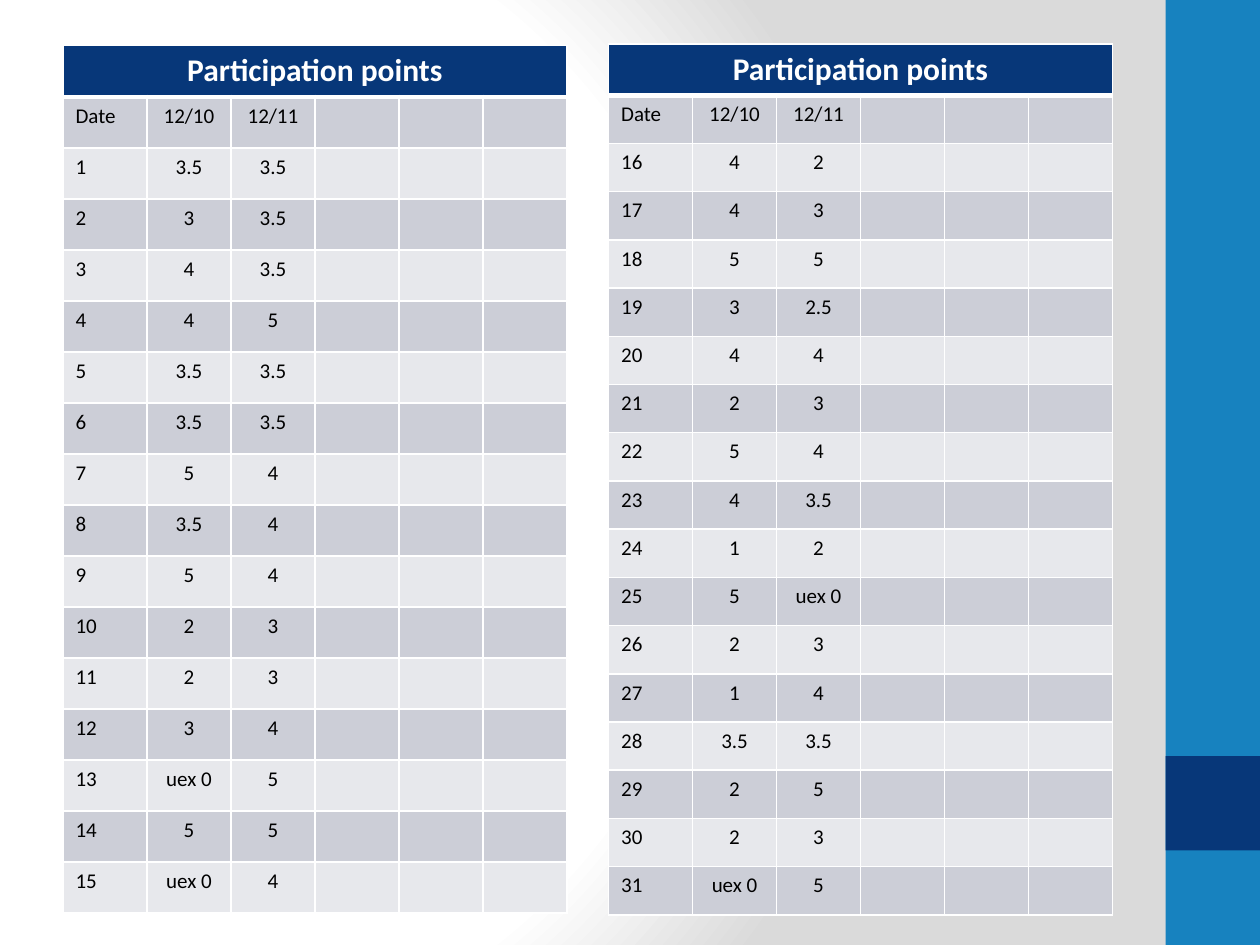
"""Build a slide with two tables of class participation points."""
from lxml.etree import SubElement
from pptx import Presentation
from pptx.dml.color import RGBColor
from pptx.enum.shapes import MSO_SHAPE
from pptx.enum.text import PP_ALIGN
from pptx.oxml import parse_xml
from pptx.oxml.ns import nsdecls, qn
from pptx.util import Inches, Pt

BLACK = RGBColor(0x00, 0x00, 0x00)
WHITE = RGBColor(0xFF, 0xFF, 0xFF)
NAVY = RGBColor(0x07, 0x37, 0x79)
BLUE = RGBColor(0x17, 0x82, 0xBF)
DARK = RGBColor(0xCC, 0xCE, 0xD7)
LIGHT = RGBColor(0xE7, 0xE8, 0xEC)
GRAY = RGBColor(0xDA, 0xDA, 0xDA)

COLS = 6
DATES = ["Date", "12/10", "12/11"]
LEFT = [
    ("3.5", "3.5"), ("3", "3.5"), ("4", "3.5"), ("4", "5"), ("3.5", "3.5"),
    ("3.5", "3.5"), ("5", "4"), ("3.5", "4"), ("5", "4"), ("2", "3"),
    ("2", "3"), ("3", "4"), ("uex 0", "5"), ("5", "5"), ("uex 0", "4"),
]
RIGHT = [
    ("4", "2"), ("4", "3"), ("5", "5"), ("3", "2.5"), ("4", "4"), ("2", "3"),
    ("5", "4"), ("4", "3.5"), ("1", "2"), ("5", "uex 0"), ("2", "3"),
    ("1", "4"), ("3.5", "3.5"), ("2", "5"), ("2", "3"), ("uex 0", "5"),
]


def write(cell, text, size=12, color=BLACK, bold=False, align=PP_ALIGN.LEFT):
    """Put formatted text in a cell; an empty cell keeps the text size."""
    para = cell.text_frame.paragraphs[0]
    para.alignment = align
    if not text:
        para._p.get_or_add_endParaRPr().set("sz", str(size * 100))
        return
    run = para.add_run()
    run.text = text
    run.font.name = "Calibri"
    run.font.size = Pt(size)
    run.font.bold = bold
    run.font.color.rgb = color


def paint(cell, color, top=1, bottom=1):
    """Give a cell white borders and a solid fill."""
    props = cell._tc.get_or_add_tcPr()
    for side, width in (("L", 1), ("R", 1), ("T", top), ("B", bottom)):
        line = SubElement(props, qn(f"a:ln{side}"), w=str(Pt(width)))
        fill = SubElement(line, qn("a:solidFill"))
        SubElement(fill, qn("a:srgbClr"), val=str(WHITE))
    cell.fill.solid()
    cell.fill.fore_color.rgb = color


deck = Presentation()
deck.slide_width, deck.slide_height = Inches(10), Inches(7.5)
slide = deck.slides.add_slide(deck.slide_layouts[6])

stops = "".join(
    f'<a:gs pos="{pos * 1000}"><a:srgbClr val="{color}"/></a:gs>'
    for pos, color in ((0, WHITE), (75, WHITE), (100, GRAY))
)
slide._element.cSld.insert(0, parse_xml(
    f'<p:bg {nsdecls("p", "a")}><p:bgPr><a:gradFill rotWithShape="1">'
    f'<a:gsLst>{stops}</a:gsLst><a:path path="circle">'
    '<a:fillToRect l="20000" t="50000" r="100000" b="50000"/></a:path>'
    '</a:gradFill><a:effectLst/></p:bgPr></p:bg>'
))

for top, height, color in ((0, 7.5, BLUE), (6, 0.75, NAVY)):
    band = slide.shapes.add_shape(
        MSO_SHAPE.RECTANGLE, Inches(9.25), Inches(top), Inches(0.75), Inches(height)
    )
    band.shadow.inherit = False
    band.fill.solid()
    band.fill.fore_color.rgb = color
    band.line.fill.background()

for left, top, height, head, first, points in (
    (0.5, 0.36, 6.89, 0.41, 1, LEFT),
    (4.83, 0.35, 6.91, 0.4, 16, RIGHT),
):
    rows = [DATES] + [[str(num), *pair] for num, pair in enumerate(points, first)]
    table = slide.shapes.add_table(
        len(rows) + 1, COLS, Inches(left), Inches(top), Inches(4), Inches(height)
    ).table
    table.first_row = table.horz_banding = False
    for row in table.rows:
        row.height = Inches((height - head) / len(rows))
    table.rows[0].height = Inches(head)

    for col in range(COLS):
        paint(table.cell(0, col), NAVY, bottom=3)
    title = table.cell(0, 0)
    title.merge(table.cell(0, COLS - 1))
    write(title, "Participation points", size=18, color=WHITE, bold=True,
          align=PP_ALIGN.CENTER)

    for row, values in enumerate(rows, 1):
        for col in range(COLS):
            cell = table.cell(row, col)
            paint(cell, DARK if row % 2 else LIGHT, top=3 if row == 1 else 1)
            write(cell, values[col] if col < len(values) else "",
                  align=PP_ALIGN.CENTER if col else PP_ALIGN.LEFT)

deck.save("out.pptx")
